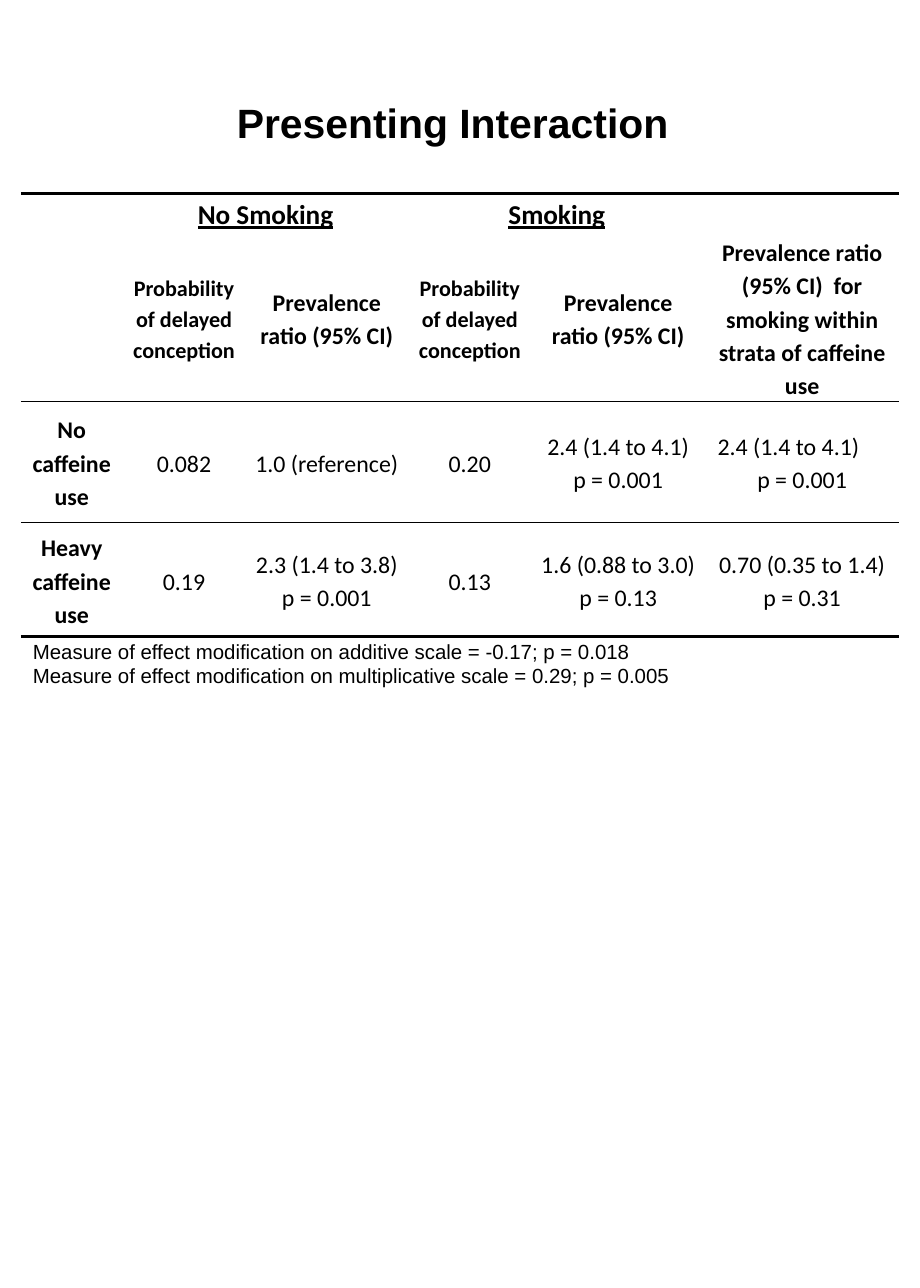
from lxml.etree import SubElement
from pptx import Presentation
from pptx.dml.color import RGBColor
from pptx.enum.text import MSO_ANCHOR as Anchor, PP_ALIGN as Align
from pptx.oxml import parse_xml
from pptx.oxml.ns import nsdecls, qn
from pptx.util import Pt

PX = 9144  # 100 px to the inch
THEME = {
    "ink": "000000",
    "heading_font": "Arial", "table_font": "Calibri",
    "title": 24, "group": 16, "narrow": 13, "cell": 14, "note": 12,
    "thick": 2.25, "thin": 0.25,
}
NO_STYLE = "{2D5ABB26-0587-4C30-8999-92F81FD0307C}"


def write(paragraph, text, name, size, **formats):
    run = paragraph.add_run()
    run.text = text
    run.font.color.rgb = RGBColor.from_string(THEME["ink"])
    for key, value in {"name": name, "size": Pt(size), **formats}.items():
        setattr(run.font, key, value)


def add_border(cell, side, weight):
    """Rule one side of a cell; side is "T" or "B"."""
    line = parse_xml(f'<a:ln{side} {nsdecls("a")} w="{int(Pt(weight))}"/>')
    color = SubElement(SubElement(line, qn("a:solidFill")), qn("a:srgbClr"))
    color.set("val", THEME["ink"])
    cell._tc.get_or_add_tcPr().insert(0, line)


presentation = Presentation()
presentation.slide_width, presentation.slide_height = 750 * PX, 1050 * PX
slide = presentation.slides.add_slide(presentation.slide_layouts[5])

# Title
title = slide.shapes.title
title.left, title.top, title.width, title.height = (n * PX for n in (50, 41, 638, 117))
title.text_frame.vertical_anchor = Anchor.MIDDLE
title.text_frame.paragraphs[0].alignment = Align.CENTER
write(title.text_frame.paragraphs[0], "Presenting Interaction",
      THEME["heading_font"], THEME["title"], bold=True)

# Table
probability = "Probability of delayed conception"
ratio = "Prevalence ratio (95% CI)"
rows = [
    ["", "No Smoking", "", "Smoking", "", ""],
    ["", probability, ratio, probability, ratio,
     "Prevalence ratio (95% CI)  for smoking within strata of caffeine use"],
    ["No caffeine use", "0.082", "1.0 (reference)", "0.20",
     "2.4 (1.4 to 4.1) p = 0.001", "2.4 (1.4 to 4.1)\np = 0.001"],
    ["Heavy caffeine use", "0.19", "2.3 (1.4 to 3.8) p = 0.001", "0.13",
     "1.6 (0.88 to 3.0) p = 0.13", "0.70 (0.35 to 1.4) p = 0.31"],
]
column_widths = [83, 100, 133, 100, 142, 158]
row_heights = [33, 134, 99, 93]
borders = {0: [("T", "thick")], 1: [("B", "thin")],
           2: [("T", "thin")], 3: [("B", "thick")]}

table = slide.shapes.add_table(
    len(rows), len(column_widths), 17 * PX, 158 * PX,
    sum(column_widths) * PX, sum(row_heights) * PX).table
table.first_row = table.horz_banding = False
table._tbl.tblPr.find(qn("a:tableStyleId")).text = NO_STYLE
for column, width in zip(table.columns, column_widths):
    column.width = width * PX
for row, height in zip(table.rows, row_heights):
    row.height = height * PX
for start in (1, 3):
    table.cell(0, start).merge(table.cell(0, start + 1))

cell_format = {"margin_left": 7 * PX, "margin_right": 7 * PX,
               "margin_top": 0, "margin_bottom": 0}
for r, texts in enumerate(rows):
    for c, text in enumerate(texts):
        cell = table.cell(r, c)
        for key, value in cell_format.items():
            setattr(cell, key, value)
        cell.vertical_anchor = Anchor.MIDDLE if r else Anchor.TOP
        cell.fill.background()
        for side, weight in borders[r]:
            add_border(cell, side, THEME[weight])
        if not text:
            continue
        size = "group" if r == 0 else "narrow" if text == probability else "cell"
        for i, line in enumerate(text.split("\n")):
            frame = cell.text_frame
            paragraph = frame.add_paragraph() if i else frame.paragraphs[0]
            paragraph.alignment = Align.CENTER
            paragraph.line_spacing = 1.15
            write(paragraph, line, THEME["table_font"], THEME[size],
                  bold=r < 2 or c == 0, underline=r == 0)

# The first line of the upper right ratio starts at the left of its cell
ratio_line = table.cell(2, 5).text_frame.paragraphs[0]
ratio_line.alignment = Align.LEFT
ratio_line._p.get_or_add_pPr().set("marL", str(3 * PX))

# Notes below the table
notes = slide.shapes.add_textbox(17 * PX, 516 * PX, 546 * PX, 50 * PX).text_frame
notes.word_wrap = True
notes.vertical_anchor = Anchor.MIDDLE
for i, text in enumerate([
    "Measure of effect modification on additive scale = -0.17; p = 0.018",
    "Measure of effect modification on multiplicative scale = 0.29; p = 0.005",
]):
    paragraph = notes.add_paragraph() if i else notes.paragraphs[0]
    write(paragraph, text, THEME["heading_font"], THEME["note"])

presentation.save("out.pptx")
